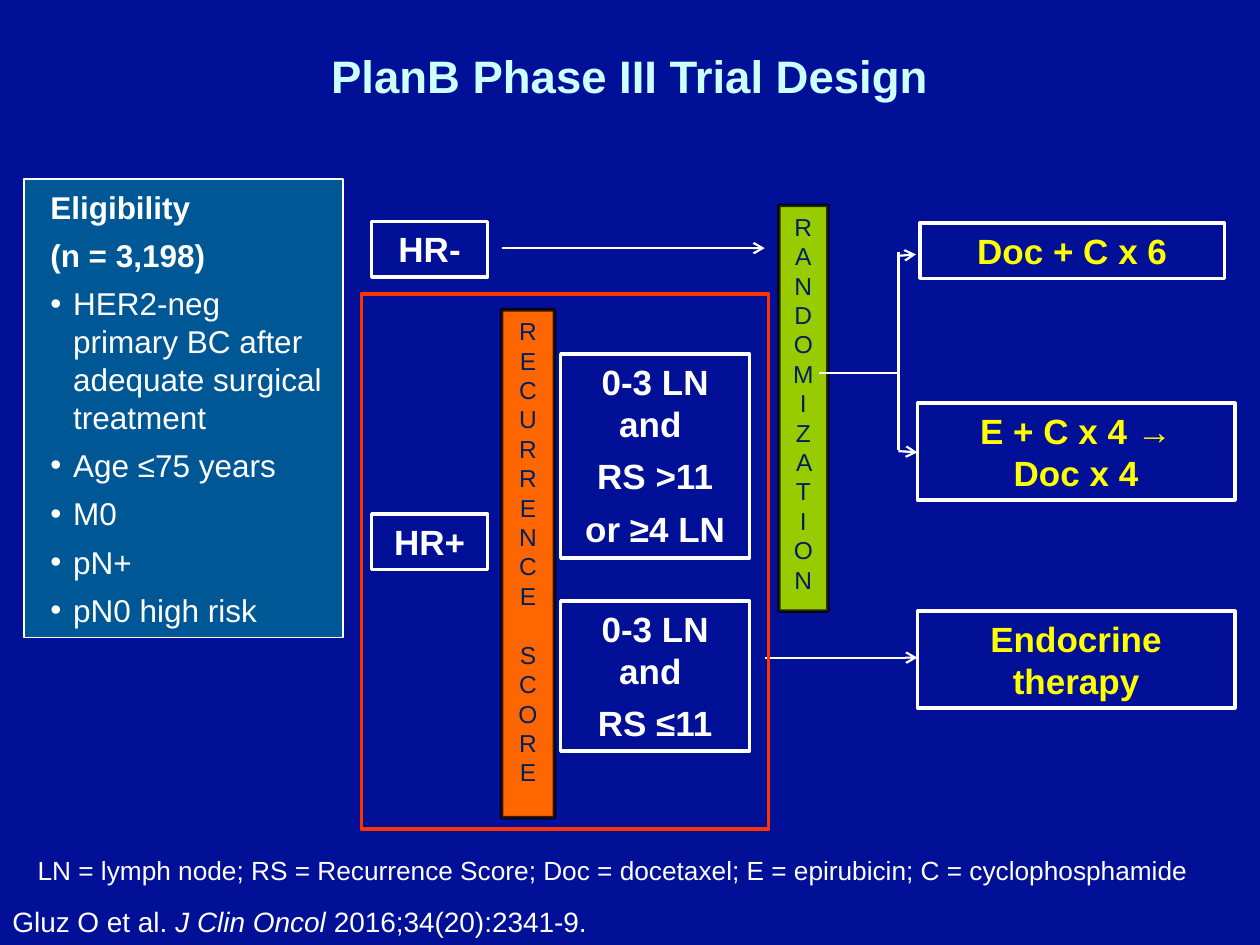
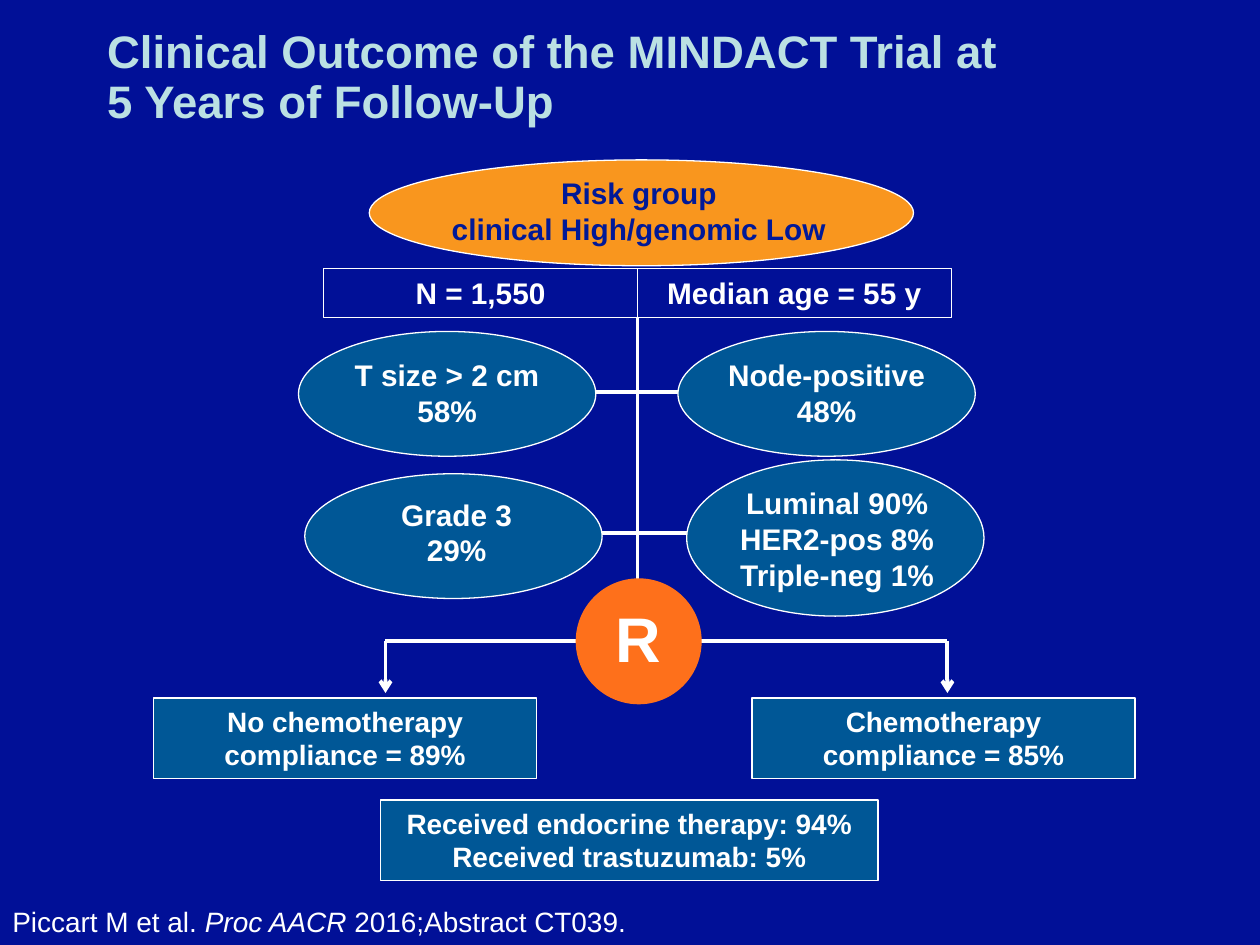
from lxml.etree import SubElement
from pptx import Presentation
from pptx.dml.color import RGBColor
from pptx.enum.shapes import MSO_CONNECTOR, MSO_SHAPE
from pptx.enum.text import MSO_ANCHOR, MSO_AUTO_SIZE, PP_ALIGN
from pptx.oxml.ns import qn
from pptx.util import Pt

NAVY, BLUE, WHITE, YELLOW = "011097", "005796", "FFFFFF", "FFFF00"
LEFT, CENTER = PP_ALIGN.LEFT, PP_ALIGN.CENTER


def rgb(color):
    return RGBColor.from_string(color)


class Deck:
    font = "Arial"
    insets = (7.2, 3.6, 7.2, 3.6)

    def __init__(self):
        self.prs = Presentation()
        self.prs.slide_width, self.prs.slide_height = Pt(720), Pt(540)
        background = self.prs.slide_master.background.fill
        background.solid()
        background.fore_color.rgb = rgb(NAVY)
        self.slide = None

    def new_slide(self, layout, title, color, align, citation):
        """Start a slide with its title and its citation footer."""
        self.slide = self.prs.slides.add_slide(self.prs.slide_layouts[layout])
        heading = self.slide.shapes.title
        self.place(heading, (54, 0, 612, 90))
        self.set_text(heading, [title], 26, color, align=align, anchor=MSO_ANCHOR.MIDDLE)
        heading.text_frame.paragraphs[0].line_spacing = 0.9
        self.label((0, 513.4, 704.2, 26.6), [citation], 16, bold=False, align=LEFT)

    def place(self, shape, box):
        shape.left, shape.top, shape.width, shape.height = map(Pt, box)

    def set_text(self, shape, paragraphs, size, color=WHITE, bold=True, align=CENTER,
                 before=0, anchor=MSO_ANCHOR.TOP, insets=insets):
        """A paragraph is a string, or a list of runs with every second one italic."""
        frame = shape.text_frame
        frame.word_wrap = True
        frame.auto_size = MSO_AUTO_SIZE.NONE
        frame.vertical_anchor = anchor
        (frame.margin_left, frame.margin_top,
         frame.margin_right, frame.margin_bottom) = map(Pt, insets)
        for i, content in enumerate(paragraphs):
            paragraph = frame.add_paragraph() if i else frame.paragraphs[0]
            paragraph.alignment = align
            paragraph.space_before = Pt(before)
            runs = [content] if isinstance(content, str) else content
            for j, text in enumerate(runs):
                for k, line in enumerate(text.split("\n")):
                    if k:
                        paragraph.add_line_break()
                    run = paragraph.add_run()
                    run.text = line
                    run.font.name, run.font.size = self.font, Pt(size)
                    run.font.bold, run.font.italic = bold, j % 2 == 1
                    run.font.color.rgb = rgb(color)

    def paint(self, shape, fill=None, line=WHITE, width=0.75):
        if fill:
            shape.fill.solid()
            shape.fill.fore_color.rgb = rgb(fill)
        else:
            shape.fill.background()
        if line:
            shape.line.color.rgb = rgb(line)
            shape.line.width = Pt(width)
        else:
            shape.line.fill.background()

    def shape(self, box, fill=None, line=WHITE, width=0.75, kind=MSO_SHAPE.RECTANGLE):
        shape = self.slide.shapes.add_shape(kind, *map(Pt, box))
        shape.shadow.inherit = False
        self.paint(shape, fill, line, width)
        return shape

    def label(self, box, paragraphs, size, color=WHITE, **style):
        self.set_text(self.slide.shapes.add_textbox(*map(Pt, box)),
                      paragraphs, size, color, **style)

    def step(self, box, paragraphs, color=WHITE, before=0):
        """Outlined box of the trial flow."""
        self.set_text(self.shape(box, width=2), paragraphs, 20, color,
                      before=before, insets=(3.6,) * 4)

    def panel(self, box, paragraphs, size, fill=BLUE):
        self.set_text(self.shape(box, fill), paragraphs, size)

    def letter_bar(self, box, fill, paragraphs):
        """Narrow bar whose text wraps letter by letter."""
        bar = self.shape(box, fill, "000000", 2)
        outline = bar._element.spPr.find(qn("a:ln"))
        SubElement(outline.find(".//" + qn("a:srgbClr")), qn("a:alpha"), val="78000")
        self.set_text(bar, paragraphs, 14, "002060", bold=False)
        return bar

    def oval(self, box, fill=BLUE, line=WHITE):
        return self.shape(box, fill, line, kind=MSO_SHAPE.OVAL)

    def line(self, x1, y1, x2, y2, width=1.25, arrow=False):
        line = self.slide.shapes.add_connector(
            MSO_CONNECTOR.STRAIGHT, Pt(x1), Pt(y1), Pt(x2), Pt(y2))
        line.line.color.rgb = rgb(WHITE)
        line.line.width = Pt(width)
        properties = line._element.spPr
        if arrow:
            SubElement(properties.find(qn("a:ln")), qn("a:tailEnd"), type="arrow")
        SubElement(properties, qn("a:effectLst"))

    def criteria(self, box, headings, items):
        """Filled list in the body placeholder: plain headings, then bullets."""
        body = self.slide.placeholders[1]
        self.place(body, box)
        self.paint(body, BLUE, width=1)
        self.set_text(body, headings + items, 18, bold=False, align=LEFT, before=6,
                      anchor=MSO_ANCHOR.MIDDLE, insets=(14.4, 14.4, 7.2, 14.4))
        for i, paragraph in enumerate(body.text_frame.paragraphs):
            properties = paragraph._p.get_or_add_pPr()
            properties.set("marL", str(Pt(13.7)))
            properties.set("indent", str(-Pt(13)))
            if i < len(headings):
                paragraph.runs[0].font.bold = True
                SubElement(properties, qn("a:buNone"))
            else:
                SubElement(properties, qn("a:buFont"), typeface=self.font)
                SubElement(properties, qn("a:buChar"), char="•")


def trial_design(deck):
    deck.new_slide(1, "PlanB Phase III Trial Design", "CCFFFF", CENTER,
                   ["Gluz O et al. ", "J Clin Oncol ", "2016;34(20):2341-9."])
    deck.criteria((13.7, 102.2, 182.2, 262.1), ["Eligibility", "(n = 3,198)"],
                  ["HER2-neg primary BC\u00a0after adequate surgical treatment",
                   "Age ≤75 years", "M0", "pN+", "pN0 high risk"])

    # Randomization and recurrence score
    deck.letter_bar((445, 117.4, 28.1, 231.8), "99CC00", ["RANDOMI\nZAT\nION"])
    score_bar = deck.letter_bar((286.6, 177.1, 30.2, 290.2), "FF6600",
                                ["RECURRENCE", "SCORE"])
    score_bar.text_frame.paragraphs[1].space_before = Pt(16.8)

    # Treatment arms
    deck.step((525.6, 127.4, 174.2, 31.7), ["Doc + C x 6"], YELLOW)
    for top, arm in [(230.4, ["E + C x 4 →", "Doc x 4"]),
                     (349.2, ["Endocrine therapy"])]:
        deck.step((524.2, top, 181.4, 55.4), arm, YELLOW)

    # Receptor status and risk groups
    for top, status in [(126.7, "HR-"), (293.8, "HR+")]:
        deck.step((212.4, top, 66.2, 31.7), [status])
    for top, height, rule in [(202.3, 116.6, ["RS >11", "or ≥4 LN"]),
                              (343.4, 85.7, ["RS ≤11"])]:
        deck.step((320.4, top, 108, height), ["0-3 LN and "] + rule, before=6)

    # Flow lines
    fork = 513.4
    for arrow in [(286.6, 141.8, 437, 141.8), (437, 375.8, 524.2, 375.8),
                  (fork, 146.2, 523.4, 145.4), (fork, 257.8, 524.2, 258.5)]:
        deck.line(*arrow, arrow=True)
    deck.line(fork, 144, fork, 257)
    deck.line(fork, 213.1, 468, 213.1)

    # HR+ frame and abbreviations
    deck.shape((206.6, 167.8, 232.6, 306), line="FF3300", width=2.25)
    deck.label((14.4, 484.6, 694.8, 25.2),
               ["LN = lymph node; RS = Recurrence Score; Doc = docetaxel; "
                "E = epirubicin; C = cyclophosphamide"], 15, bold=False, align=LEFT)


def clinical_outcome(deck):
    deck.new_slide(5, "Clinical Outcome of the MINDACT Trial at\n5 Years of Follow-Up",
                   "BBE0E3", LEFT,
                   ["Piccart M et al. ", "Proc AACR", " 2016;Abstract CT039."])
    trunk, branch = 364.3, 366.5

    # Branches to the patient characteristics
    for y in (223.9, 304.6):
        deck.line(328.3, y, 400.3, y, 2.25)

    # Risk group
    deck.oval((211, 91.4, 311, 60.5), "F9961E")
    deck.label((182.2, 96.5, 365.8, 48.2),
               ["Risk group\nclinical High/genomic Low"], 17, "011997")
    for i, fact in enumerate(["N = 1,550", "Median age = 55 y"]):
        deck.panel((185 + i * 179.3, 153.4, 179.3, 28.1), [fact], 17, fill=None)

    # Patient characteristics: oval left, top, height; text left, top, width
    for left, top, height, text_left, text_top, text_width, trait in [
            (170.6, 189.4, 71.3, 170.6, 200.2, 169.9, "T size > 2 cm\n58%"),
            (387.4, 189.4, 71.3, 387.4, 200.2, 169.9, "Node-positive\n48%"),
            (174.2, 270.7, 71.3, 177.8, 280.1, 166.3, "Grade 3\n29%"),
            (392.4, 262.8, 89.3, 396.7, 273.6, 163.4,
             "Luminal 90%\nHER2-pos 8%\nTriple-neg 1%")]:
        deck.oval((left, top, 169.9, height))
        deck.label((text_left, text_top, text_width, height - 22), [trait], 17)

    # Randomized arms
    deck.line(trunk, 181.4, trunk, 355.7, 2.25)
    deck.line(220.3, branch, 541.4, branch, 2.25)
    for left, x, arm in [(87.8, 220.3, "No chemotherapy\ncompliance = 89%"),
                         (429.8, 541.4, "Chemotherapy\ncompliance = 85%")]:
        deck.panel((left, 398.9, 218.9, 46.1), [arm], 16)
        deck.line(x, branch, x, 396, 2.25, arrow=True)
    deck.panel((217.4, 457.2, 284.4, 46.1),
               ["Received endocrine therapy: 94%", "Received trastuzumab: 5%"], 16)

    # Randomization mark
    deck.oval((329, 330.5, 72, 72), "FE701B", None)
    deck.label((334.8, 336.2, 59.8, 59.8), ["R"], 36,
               anchor=MSO_ANCHOR.MIDDLE, insets=(0, 0, 0, 3.6))


def main():
    deck = Deck()
    trial_design(deck)
    clinical_outcome(deck)
    deck.prs.save("out.pptx")


if __name__ == "__main__":
    main()
